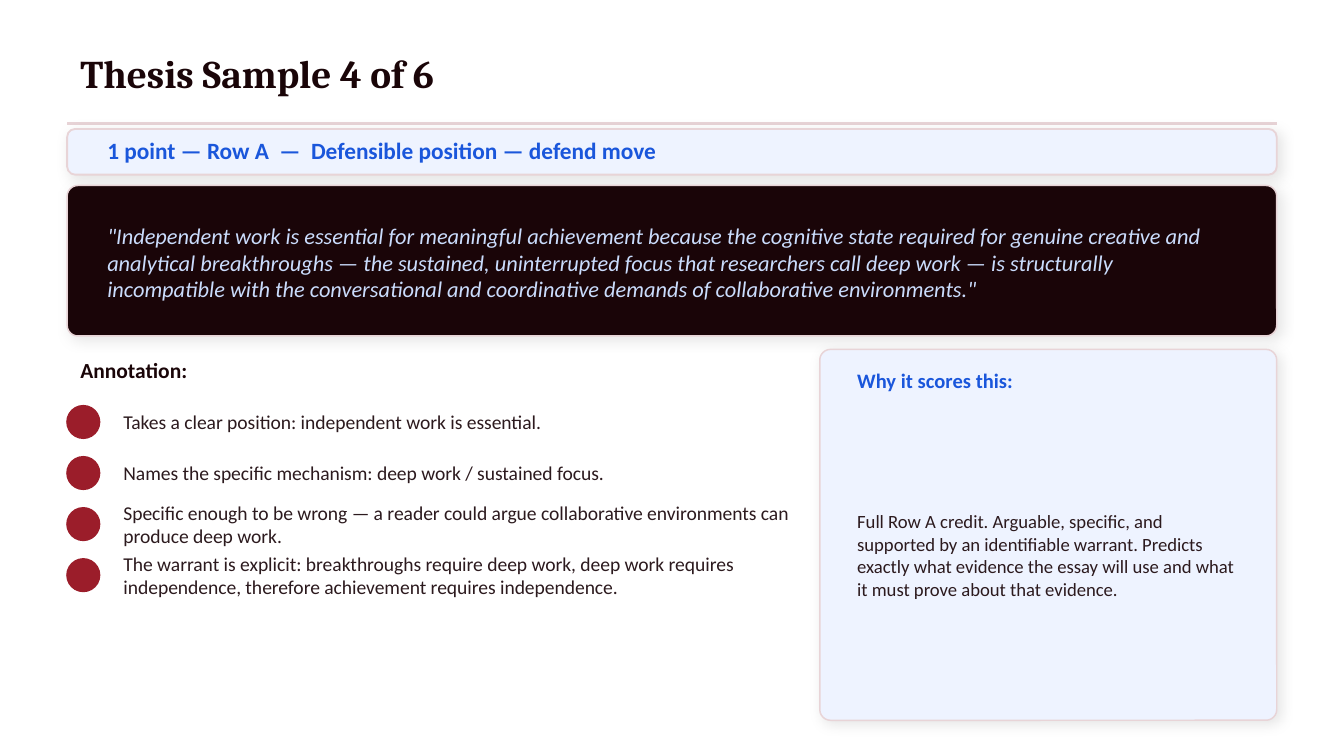
from lxml import etree
from pptx import Presentation
from pptx import util as u
from pptx.dml.color import RGBColor
from pptx.enum import shapes, text
from pptx.oxml import ns

COLORS = {
    "ink": "1A0508",
    "body": "2C1A1E",
    "blue": "1A56DB",
    "pale": "EEF3FF",
    "quote": "CADCFC",
    "border": "E8D4D7",
    "red": "9B1D2A",
    "shadow": "000000",
}

ANNOTATIONS = [
    "Takes a clear position: independent work is essential.",
    "Names the specific mechanism: deep work / sustained focus.",
    "Specific enough to be wrong — a reader could argue collaborative environments can produce deep work.",
    "The warrant is explicit: breakthroughs require deep work, deep work requires independence, "
    "therefore achievement requires independence.",
]
QUOTE = (
    '"Independent work is essential for meaningful achievement because the cognitive state required '
    "for genuine creative and analytical breakthroughs — the sustained, uninterrupted focus that "
    "researchers call deep work — is structurally incompatible with the conversational and "
    'coordinative demands of collaborative environments."'
)
REASON = (
    "Full Row A credit. Arguable, specific, and supported by an identifiable warrant. Predicts "
    "exactly what evidence the essay will use and what it must prove about that evidence."
)


class SlideBuilder:
    """Draws styled elements on the current slide, with lengths in points."""

    def __init__(self, slide):
        self.slide = slide
        self.heading_font = "Cambria"
        self.body_font = "Calibri"

    def color(self, name):
        return RGBColor.from_string(COLORS[name])

    def label(self, box, content, size, color, font=None, bold=False, italic=False):
        frame = self.slide.shapes.add_textbox(*map(u.Pt, box)).text_frame
        frame.word_wrap = True
        frame.vertical_anchor = text.MSO_ANCHOR.MIDDLE
        run = frame.paragraphs[0].add_run()
        run.text = content
        run.font.name = font or self.body_font
        run.font.size = u.Pt(size)
        run.font.bold = bold
        run.font.italic = italic
        run.font.color.rgb = self.color(color)

    def filled(self, kind, box, fill, border, width):
        shape = self.slide.shapes.add_shape(kind, *map(u.Pt, box))
        shape.shadow.inherit = False
        shape.fill.solid()
        shape.fill.fore_color.rgb = self.color(fill)
        shape.line.color.rgb = self.color(border)
        shape.line.width = u.Pt(width)
        return shape

    def card(self, box, fill, radius, width=0.8):
        kind = shapes.MSO_SHAPE.ROUNDED_RECTANGLE
        shape = self.filled(kind, box, fill, "border", width)
        shape.adjustments[0] = radius / min(box[2:])
        effects = shape.element.spPr.find(ns.qn("a:effectLst"))
        shadow = etree.SubElement(
            effects, ns.qn("a:outerShdw"), blurRad=str(u.Pt(7)), dist=str(u.Pt(2)),
            dir=str(45 * 60000), algn="bl", rotWithShape="0",
        )
        tint = etree.SubElement(shadow, ns.qn("a:srgbClr"), val=COLORS["shadow"])
        etree.SubElement(tint, ns.qn("a:alpha"), val="9000")

    def dot(self, left, top, size):
        self.filled(shapes.MSO_SHAPE.OVAL, (left, top, size, size), "red", "red", 1)

    def rule(self, left, right, y):
        ends = map(u.Pt, (left, y, right, y))
        line = self.slide.shapes.add_connector(shapes.MSO_CONNECTOR.STRAIGHT, *ends)
        line.line.color.rgb = self.color("border")
        line.line.width = u.Pt(1.2)
        etree.SubElement(line.element.spPr, ns.qn("a:effectLst"))


def main():
    presentation = Presentation()
    presentation.slide_width = u.Pt(720)
    presentation.slide_height = u.Pt(405)
    builder = SlideBuilder(presentation.slides.add_slide(presentation.slide_layouts[6]))
    left, width = 36, 648

    builder.label((left, 15.84, width, 46.8), "Thesis Sample 4 of 6", 21, "ink",
                  font=builder.heading_font, bold=True)
    builder.rule(left, left + width, 66.24)

    builder.card((left, 69.12, width, 24.48), "pale", 4.32, width=1)
    builder.label((50.4, 70.56, 619.2, 20.16),
                  "1 point — Row A  —  Defensible position — defend move", 12.5, "blue", bold=True)

    builder.card((left, 99.36, width, 80.64), "ink", 5.76)
    builder.label((50.4, 105.12, 619.2, 70.56), QUOTE, 12, "quote", italic=True)

    builder.label((left, 187.2, 144, 21.6), "Annotation:", 11.5, "ink", bold=True)
    for index, annotation in enumerate(ANNOTATIONS):
        top = 213.12 + index * 27.36
        builder.dot(left, top + 4.32, 17.28)
        builder.label((59.04, top, 372.96, 25.92), annotation, 10.5, "body")

    builder.card((439.2, 187.2, 244.8, 198.72), "pale", 5.76)
    builder.label((452.16, 192.96, 218.88, 21.6), "Why it scores this:", 11, "blue", bold=True)
    builder.label((452.16, 217.44, 218.88, 159.84), REASON, 10, "body")

    presentation.save("out.pptx")


if __name__ == "__main__":
    main()
